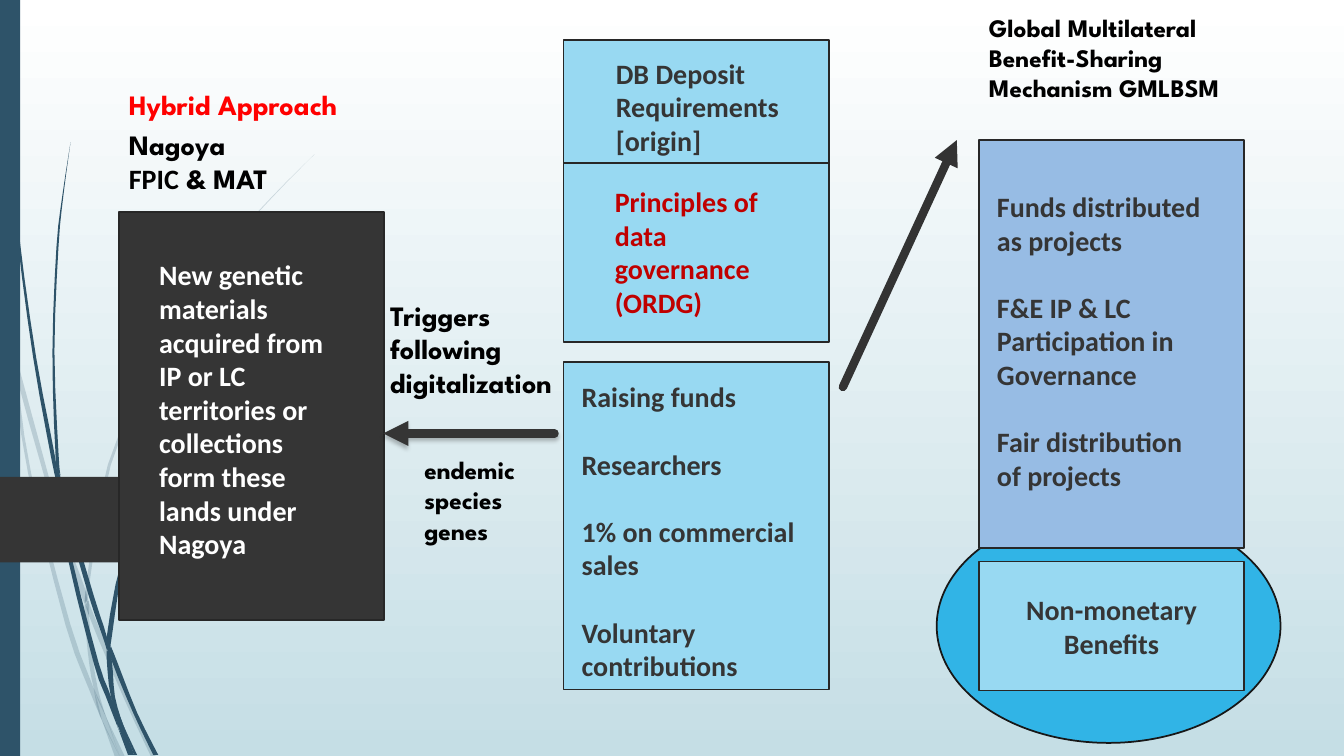
from lxml import etree
from pptx import Presentation
from pptx.dml.color import RGBColor
from pptx.enum.shapes import MSO_CONNECTOR, MSO_SHAPE
from pptx.enum.text import MSO_ANCHOR, PP_ALIGN
from pptx.oxml import parse_xml
from pptx.oxml.ns import nsdecls, qn
from pptx.util import Inches, Pt

RECT, OVAL, TAB = MSO_SHAPE.RECTANGLE, MSO_SHAPE.OVAL, MSO_SHAPE.PENTAGON
STRAIGHT = MSO_CONNECTOR.STRAIGHT
LEFT, CENTER = PP_ALIGN.LEFT, PP_ALIGN.CENTER
TOP, MIDDLE = MSO_ANCHOR.TOP, MSO_ANCHOR.MIDDLE

HEAD, BODY = "League Spartan", "Calibri"
COLORS = {
    "white": "FFFFFF", "black": "000000", "mist": "C5DEE5", "teal": "2E5369",
    "dark": "353535", "edge": "272727", "oval_edge": "171717", "arrow": "333333",
    "sky": "98D9F2", "blue": "97BCE4", "cyan": "31B4E6",
    "red": "FF0000", "crimson": "C00000",
}
BOX_W = 2.63
COL_LEFT, COL_MID, COL_RIGHT = 1.18, 5.59, 9.71

# Each blade of grass is a list of (y, left x, width) from top to bottom.
FAINT_BLADES = [
    [(2.82, 0, 0), (2.99, 0, 0.04), (3.5, 0.11, 0)],
    [(3.45, 0.14, 0), (3.76, 0.17, 0.05), (5.21, 0.58, 0.04), (5.86, 0.79, 0.06),
     (5.99, 0.84, 0)],
    [(5.96, 0.88, 0), (6.1, 0.88, 0.05), (6.93, 1.23, 0.05), (7.51, 1.5, 0.05)],
    [(7.11, 1.05, 0), (7.51, 1.19, 0.05)],
    [(3.5, 0.11, 0), (3.76, 0.14, 0.03), (4.7, 0.28, 0.03), (6.2, 0.65, 0.05),
     (6.83, 0.88, 0.05), (7.14, 1.01, 0)],
    [(5.99, 0.84, 0), (6.08, 0.84, 0.04), (6.46, 0.87, 0.04), (6.83, 0.93, 0.04),
     (7.11, 1.05, 0)],
    [(1.53, 3.12, 0), (1.97, 2.68, 0.01), (2.44, 2.28, 0.01), (3.48, 1.58, 0.02),
     (4.61, 1.07, 0.03), (5.84, 0.85, 0.03), (5.96, 0.88, 0)],
    [(7.14, 1.01, 0), (7.51, 1.14, 0.05)],
    [(5.86, 0.85, 0), (5.98, 0.84, 0.04), (6.1, 0.88, 0)],
    [(6.83, 0.93, 0), (7.1, 0.99, 0.06), (7.51, 1.19, 0)],
]
DARK_BLADES = [
    [(0, 0.03, 0.01), (1.1, 0.07, 0.01), (2.33, 0.17, 0.02), (3.55, 0.33, 0.03),
     (4.55, 0.51, 0.04), (4.81, 0.57, 0)],
    [(4.72, 0.6, 0), (5.05, 0.64, 0.04), (5.91, 0.88, 0.05), (6.32, 1.02, 0.04),
     (6.45, 1.06, 0)],
    [(6.41, 1.1, 0), (6.56, 1.11, 0.05), (7.07, 1.32, 0.04), (7.49, 1.52, 0.05)],
    [(4.77, 0.57, 0), (5.05, 0.61, 0.03), (5.57, 0.68, 0.04), (6.58, 0.93, 0.05),
     (6.91, 1.05, 0.05), (7.22, 1.17, 0)],
    [(1.41, 0.7, 0), (1.93, 0.62, 0.01), (2.45, 0.56, 0.02), (3.49, 0.52, 0.02),
     (4.49, 0.55, 0.03), (4.72, 0.6, 0)],
    [(7.19, 1.22, 0), (7.49, 1.33, 0.03)],
    [(4.49, 0.55, 0), (4.75, 0.57, 0.03), (5.05, 0.64, 0)],
    [(3.44, 2.6, 0.01), (3.73, 2.31, 0.01), (4.05, 2.04, 0.01), (4.74, 1.56, 0.03),
     (5.51, 1.22, 0.03), (6.31, 1.06, 0.05), (6.41, 1.1, 0)],
    [(7.22, 1.17, 0), (7.49, 1.27, 0.04)],
    [(6.45, 1.06, 0), (6.56, 1.06, 0.05), (6.91, 1.1, 0.04), (7.19, 1.22, 0)],
    [(6.31, 1.06, 0), (6.43, 1.06, 0.04), (6.56, 1.11, 0)],
    [(6.91, 1.1, 0), (7.18, 1.16, 0.06), (7.49, 1.3, 0.03)],
]


def rgb(name):
    return RGBColor.from_string(COLORS[name])


def smooth_rows(rows, steps=3):
    """Interpolate the rows with a Catmull-Rom curve."""
    ends = [rows[0], *rows, rows[-1]]
    out = []
    for a, b, c, d in zip(ends, ends[1:], ends[2:], ends[3:]):
        for t in (i / steps for i in range(steps)):
            out.append([
                (2 * q + (r - p) * t + (2 * p - 5 * q + 4 * r - s) * t ** 2
                 + (3 * q - p - 3 * r + s) * t ** 3) / 2
                for p, q, r, s in zip(a, b, c, d)])
    return out + [rows[-1]]


def add_blade(s, rows, alpha=None):
    curve = smooth_rows(rows)
    outline = [(x, y) for y, x, w in curve] + [(x + w, y) for y, x, w in reversed(curve)]
    points = [(Inches(x), Inches(y)) for x, y in outline]
    fb = s.shapes.build_freeform(*points[0])
    fb.add_line_segments(points[1:], close=True)
    sp = fb.convert_to_shape()
    paint(sp, "teal")
    if alpha:
        color = sp.fill._xPr.find(qn("a:solidFill"))[0]
        etree.SubElement(color, qn("a:alpha"), val=str(alpha * 1000))


def paint(sp, fill, line=None):
    sp.shadow.inherit = False
    sp.fill.solid()
    sp.fill.fore_color.rgb = rgb(fill)
    if line:
        sp.line.color.rgb = rgb(line)
        sp.line.width = Pt(1.25)
    else:
        sp.line.fill.background()


def add_box(s, x, y, w, h, fill, line="edge", kind=RECT):
    sp = s.shapes.add_shape(kind, Inches(x), Inches(y), Inches(w), Inches(h))
    paint(sp, fill, line)
    return sp


def write(sp, paragraphs, size=20, color="dark", font=BODY, gap=0, align=LEFT, anchor=TOP):
    """Fill a shape; a paragraph is a string or a list of (text, font) runs."""
    tf = sp.text_frame
    tf.word_wrap = True
    tf.vertical_anchor = anchor
    for i, content in enumerate(paragraphs):
        p = tf.paragraphs[0] if i == 0 else tf.add_paragraph()
        p.alignment = align
        if i and gap:
            p.space_before = Pt(gap)
        for text, face in [(content, font)] if isinstance(content, str) else content:
            for j, part in enumerate(text.split("\n")):
                if j:
                    p.add_line_break()
                r = p.add_run()
                r.text = part
                r.font.name, r.font.size, r.font.bold = face, Pt(size), True
                r.font.color.rgb = rgb(color)


def add_text(s, x, y, w, h, paragraphs, **fmt):
    write(s.shapes.add_textbox(Inches(x), Inches(y), Inches(w), Inches(h)), paragraphs, **fmt)


def add_arrow(s, x1, y1, x2, y2, color, shadow=False):
    cx = s.shapes.add_connector(STRAIGHT, Inches(x1), Inches(y1), Inches(x2), Inches(y2))
    cx.line.color.rgb = rgb(color)
    cx.line.width = Pt(6)
    ln = cx.line._get_or_add_ln()
    ln.set("cap", "rnd")
    etree.SubElement(ln, qn("a:tailEnd"), type="triangle")
    effect = (f'<a:outerShdw blurRad="{Pt(3)}" dist="{Pt(2)}" dir="5400000">'
              '<a:srgbClr val="000000"><a:alpha val="25000"/></a:srgbClr>'
              '</a:outerShdw>') if shadow else ""
    cx._element.spPr.append(parse_xml(f'<a:effectLst {nsdecls("a")}>{effect}</a:effectLst>'))


def add_backdrop(s):
    fill = s.background.fill
    fill.gradient()
    fill.gradient_angle = 270
    for stop, name in zip(fill.gradient_stops, ("white", "mist")):
        stop.color.rgb = rgb(name)
    for rows in FAINT_BLADES:
        add_blade(s, rows, alpha=20)
    for rows in DARK_BLADES:
        add_blade(s, rows)
    add_box(s, 0, 0, 0.2, 7.5, "teal", None)
    add_box(s, 0, 4.73, 1.91, 0.85, "dark", None, TAB)


def main():
    prs = Presentation()
    prs.slide_width, prs.slide_height = Inches(13.33), Inches(7.5)
    s = prs.slides.add_slide(prs.slide_layouts[6])
    add_backdrop(s)

    add_box(s, 9.29, 5.05, 3.41, 2.32, "cyan", "oval_edge", OVAL)
    add_box(s, COL_LEFT, 2.1, BOX_W, 4.05, "dark")
    add_box(s, COL_MID, 3.59, BOX_W, 3.25, "sky")
    add_box(s, COL_RIGHT, 1.39, BOX_W, 4.05, "blue")
    add_box(s, COL_MID, 1.61, BOX_W, 1.78, "sky")
    add_box(s, COL_MID, 0.4, BOX_W, 1.22, "sky")
    benefits = add_box(s, COL_RIGHT, 5.57, BOX_W, 1.28, "sky")
    write(benefits, ["Non-monetary Benefits"], align=CENTER, anchor=MIDDLE)

    add_arrow(s, 8.36, 3.84, 9.49, 1.39, "arrow")
    add_arrow(s, 5.5, 4.3, 3.8, 4.3, "dark", shadow=True)

    add_text(s, COL_LEFT, 0.82, 2.54, 0.44, ["Hybrid Approach"], font=HEAD, color="red")
    add_text(s, COL_LEFT, 1.22, 2.5, 0.77,
             [[("Nagoya\n", HEAD), ("FPIC", BODY), (" & MAT", HEAD)]], color="black")
    add_text(s, 1.48, 2.51, 2.03, 3.13,
             ["New genetic materials acquired from IP or LC territories or "
              "collections form these lands under Nagoya"], color="white")
    add_text(s, 3.77, 2.91, 1.96, 1.11, ["Triggers", "following digitalization"],
             font=HEAD, color="black")
    add_text(s, 4.11, 4.46, 1.37, 1.01, ["endemic", "species", "genes"],
             size=18, font=HEAD, color="black")
    add_text(s, 6.01, 0.51, 1.96, 1.11, ["DB Deposit Requirements", "[origin]"])
    add_text(s, 6, 1.78, 2.03, 1.45, ["Principles of data governance (ORDG)"], color="crimson")
    add_text(s, 5.67, 3.72, 2.55, 3.13,
             ["Raising funds", "Researchers", "1% on commercial sales",
              "Voluntary contributions"], gap=24)
    add_text(s, COL_RIGHT, 0.07, BOX_W, 1.31,
             ["Global Multilateral Benefit-Sharing Mechanism GMLBSM"],
             size=18, font=HEAD, color="black")
    add_text(s, 9.79, 1.83, 2.44, 3.13,
             ["Funds distributed as projects", "F&E IP & LC Participation in Governance",
              "Fair distribution\nof projects"], gap=24)
    prs.save("out.pptx")


if __name__ == "__main__":
    main()
